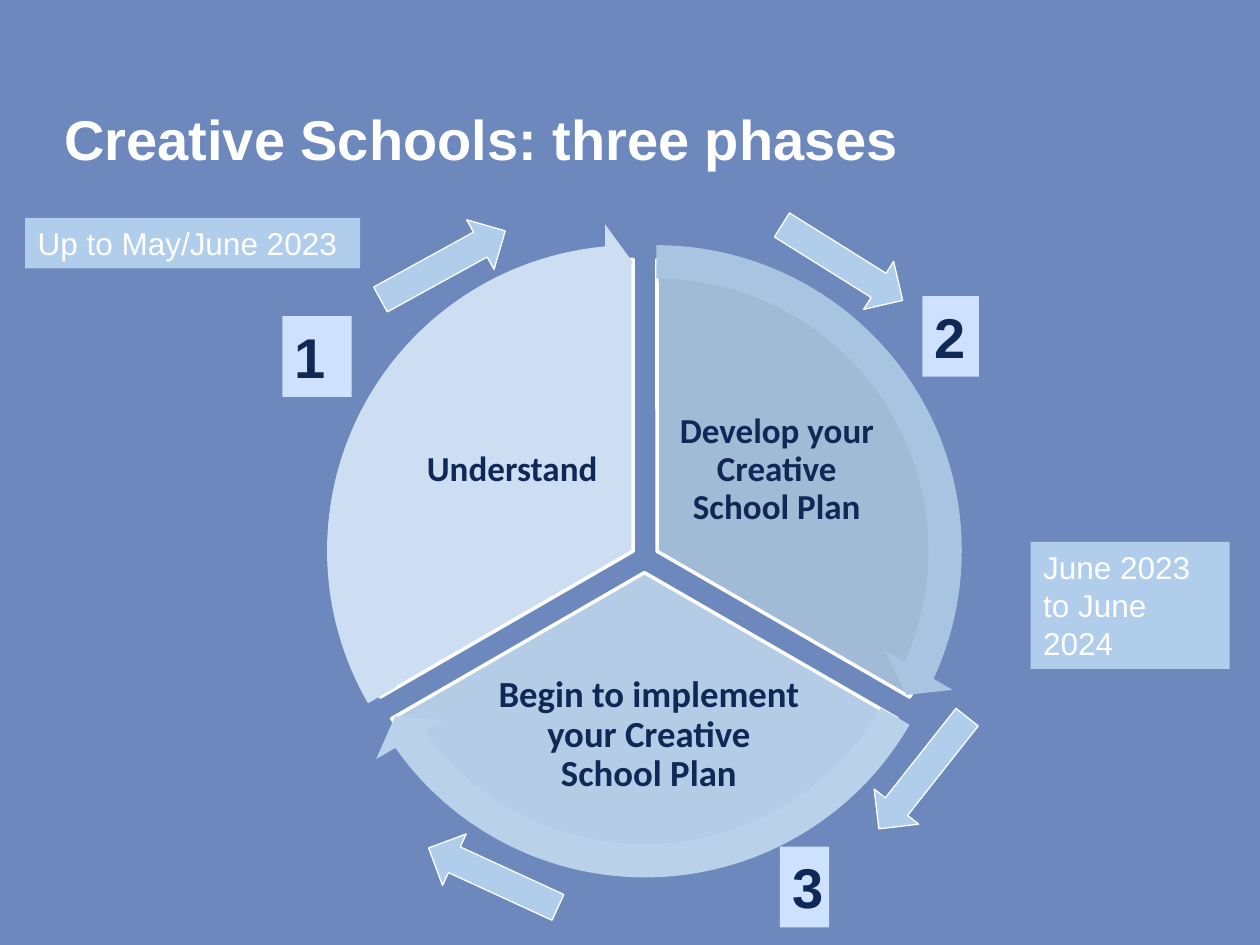
from dataclasses import dataclass

from pptx import Presentation
from pptx import util as u
from pptx.dml.color import RGBColor
from pptx.enum import shapes, text

SHAPE = shapes.MSO_SHAPE
ANCHOR = text.MSO_ANCHOR


@dataclass(frozen=True)
class Theme:
    background: str = "6D88BD"
    white: str = "FFFFFF"
    navy: str = "102856"
    badge: str = "CEE1FE"
    accent: str = "B1CDEC"
    heading_font: str = "Arial"
    phase_font: str = "Calibri"
    heading_size: int = 32
    label_size: int = 18
    wedge_line: float = 2
    arrow_line: float = 0.75


class Painter:
    def __init__(self, slide, theme):
        self.slide = slide
        self.theme = theme
        fill = slide.background.fill
        fill.solid()
        fill.fore_color.rgb = RGBColor.from_string(theme.background)

    def text(self, place, words, size, color, font=None, bold=True, fill=None,
             anchor=ANCHOR.TOP, align=text.PP_ALIGN.LEFT, spacing=None,
             insets=(0.1, 0.05, 0.1, 0.05)):
        box = self.slide.shapes.add_textbox(*map(u.Inches, place))
        frame = box.text_frame
        frame.word_wrap = True
        frame.vertical_anchor = anchor
        (frame.margin_left, frame.margin_top,
         frame.margin_right, frame.margin_bottom) = map(u.Inches, insets)
        if fill:
            box.fill.solid()
            box.fill.fore_color.rgb = RGBColor.from_string(fill)
            frame.auto_size = text.MSO_AUTO_SIZE.SHAPE_TO_FIT_TEXT
        para = frame.paragraphs[0]
        para.alignment = align
        para.line_spacing = spacing
        span = para.add_run()
        span.text = words
        span.font.name = font or self.theme.heading_font
        span.font.size = u.Pt(size)
        span.font.bold = bold
        span.font.color.rgb = RGBColor.from_string(color)

    def shape(self, kind, place, fill, line=None, adjustments=(), rotation=0):
        shape = self.slide.shapes.add_shape(kind, *map(u.Inches, place))
        shape.shadow.inherit = False
        shape.rotation = rotation
        shape.fill.solid()
        shape.fill.fore_color.rgb = RGBColor.from_string(fill)
        if line:
            shape.line.color.rgb = RGBColor.from_string(self.theme.white)
            shape.line.width = u.Pt(line)
        else:
            shape.line.fill.background()
        for index, value in enumerate(adjustments):
            shape.adjustments[index] = value

    def title(self, words):
        self.text((0.51, 0.6, 9.21, 0.79), words, self.theme.heading_size,
                  self.theme.white, anchor=ANCHOR.BOTTOM, spacing=0.8,
                  insets=(0, 0, 0, 0.03))

    def wedge(self, left, top, angles, fill, place, words, size):
        self.shape(SHAPE.PIE, (left, top, 4.63, 4.63), fill,
                   self.theme.wedge_line, angles)
        self.text(place, words, size, self.theme.navy, self.theme.phase_font,
                  anchor=ANCHOR.MIDDLE, align=text.PP_ALIGN.CENTER,
                  spacing=0.9, insets=(0.03,) * 4)

    def rim_arrow(self, left, top, end, start, fill):
        self.shape(SHAPE.CIRCULAR_ARROW, (left, top, 5.2, 5.2), fill,
                   adjustments=(0.05085, 3.27528, end, start, 0.05932))

    def badge(self, left, top, width, number):
        self.text((left, top, width, 0.64), number, self.theme.heading_size,
                  self.theme.navy, fill=self.theme.badge)

    def step_arrow(self, left, top, rotation):
        self.shape(SHAPE.RIGHT_ARROW, (left, top, 1.13, 0.45),
                   self.theme.accent, self.theme.arrow_line, rotation=rotation)

    def date_label(self, place, words):
        self.text(place, words, self.theme.label_size, self.theme.white,
                  bold=False, fill=self.theme.accent)


def main():
    deck = Presentation()
    deck.slide_width, deck.slide_height = u.Inches(10), u.Inches(7.5)
    page = Painter(deck.slides.add_slide(deck.slide_layouts[6]), Theme())

    page.title("Creative Schools: three phases")

    for wedge in (
        (2.9, 2.06, (162, 18), "A1BAD6", (5.34, 3.04, 1.65, 1.38),
         "Develop your Creative School Plan", 20),
        (2.8, 2.23, (18, 90), "B5CCE6", (3.91, 5.23, 2.48, 1.21),
         "Begin to implement your Creative School Plan", 21),
        (2.71, 2.06, (90, 162), "CDDEF2", (3.24, 3.04, 1.65, 1.38),
         "Understand", 20),
    ):
        page.wedge(*wedge)

    for rim in (
        (2.61, 1.77, 14.72, 161.99, "A9C4E1"),
        (2.52, 1.94, 86.72, 18, "BAD1EA"),
        (2.42, 1.77, 158.73, 90, "CDDEF2"),
    ):
        page.rim_arrow(*rim)

    for badge in ((2.24, 2.51, 0.55, "1"), (7.32, 2.35, 0.45, "2"),
                  (6.19, 6.72, 0.39, "3")):
        page.badge(*badge)

    for arrow in ((6.12, 1.86, 32), (6.76, 5.91, 128.3),
                  (2.95, 1.88, 331.2), (3.35, 6.74, 204.7)):
        page.step_arrow(*arrow)

    page.date_label((0.2, 1.73, 2.66, 0.4), "Up to May/June 2023")
    page.date_label((8.18, 4.3, 1.58, 1.01), "June 2023 to June 2024")

    deck.save("out.pptx")


if __name__ == "__main__":
    main()
